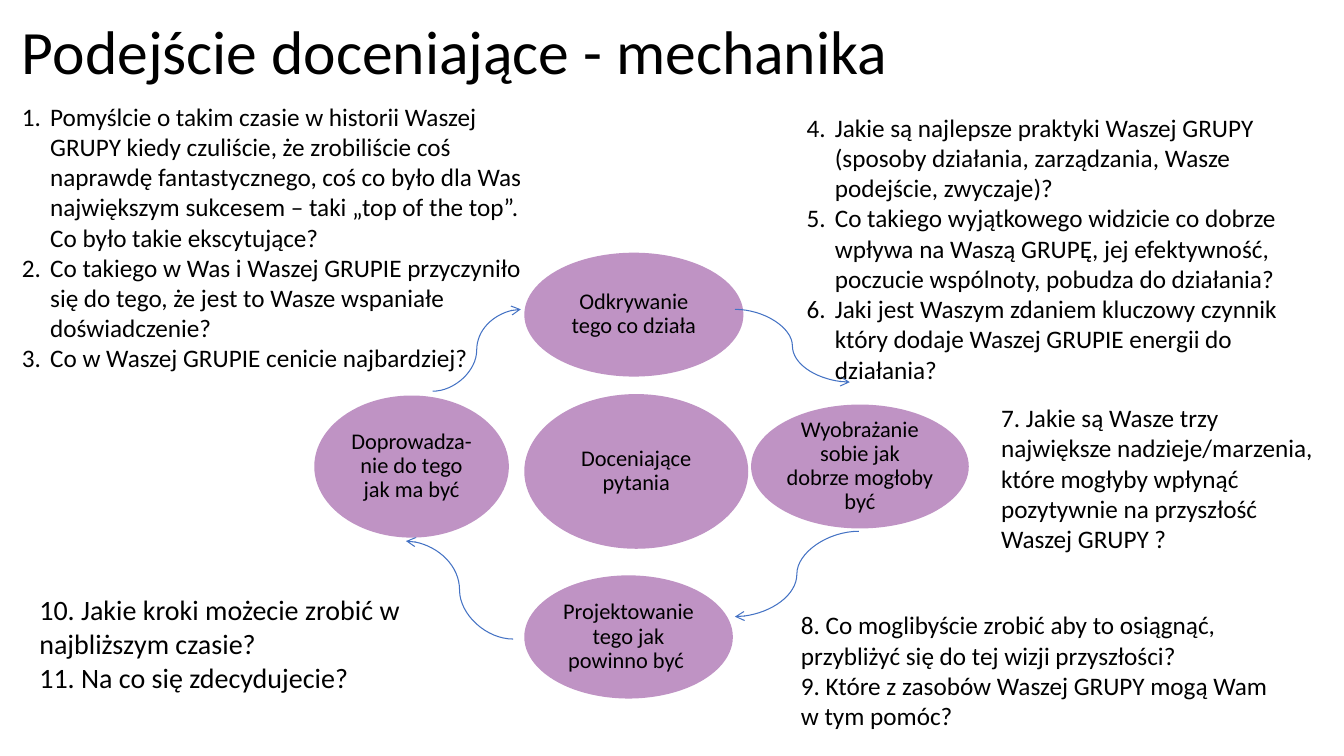
from lxml import etree
from pptx import Presentation
from pptx.dml.color import RGBColor
from pptx.enum.shapes import MSO_CONNECTOR, MSO_SHAPE
from pptx.enum.text import MSO_ANCHOR, MSO_AUTO_SIZE, PP_ALIGN
from pptx.oxml.ns import qn
from pptx.util import Pt

OVAL = MSO_SHAPE.OVAL
CURVE = MSO_CONNECTOR.CURVE
MIDDLE, TOP = MSO_ANCHOR.MIDDLE, MSO_ANCHOR.TOP
LEFT, CENTER = PP_ALIGN.LEFT, PP_ALIGN.CENTER
NO_FIT = MSO_AUTO_SIZE.NONE

FONT = "Calibri"
COLORS = {"text": "000000", "oval": "BF93C4", "arrow": "4472C4"}
NUMBER_INDENT = 20.25

# Text, then left, top, width and height
OVALS = [
    ("Doceniające pytania", (374.5, 281.5, 160, 110.5)),
    ("Odkrywanie tego co działa", (374.5, 180.5, 156.5, 88.5)),
    ("Wyobrażanie sobie jak dobrze mogłoby być", (536.5, 289, 155.5, 88.5)),
    ("Projektowanie tego jak powinno być ", (374.5, 411, 149, 88)),
    ("Doprowadza-nie do tego jak ma być", (224.5, 282.5, 139, 101.5)),
]

# Start x, start y, end x, end y
ARROWS = [
    (525, 221, 607, 273),
    (613.5, 379.5, 525, 440.5),
    (366.5, 456.5, 290, 386.5),
    (309, 279.5, 372, 221),
]

DISCOVERY = [
    "Pomyślcie o takim czasie w historii Waszej GRUPY kiedy czuliście, że zrobiliście coś "
    "naprawdę fantastycznego, coś co było dla Was największym sukcesem – taki "
    "„top of the top”. Co było takie ekscytujące?",
    "Co takiego w Was i Waszej GRUPIE przyczyniło się do tego, że jest to Wasze wspaniałe "
    "doświadczenie?",
    "Co w Waszej GRUPIE cenicie najbardziej?",
]
PRACTICES = [
    "Jakie są najlepsze praktyki Waszej GRUPY (sposoby działania, zarządzania, Wasze "
    "podejście, zwyczaje)?",
    "Co takiego wyjątkowego widzicie co dobrze wpływa na Waszą GRUPĘ, jej efektywność, "
    "poczucie wspólnoty, pobudza do działania?",
    "Jaki jest Waszym zdaniem kluczowy czynnik który dodaje Waszej GRUPIE energii do działania?",
]
DREAMS = [
    "7. Jakie są Wasze trzy największe nadzieje/marzenia, które mogłyby wpłynąć pozytywnie "
    "na przyszłość Waszej GRUPY ?",
]
DESIGN = [
    "8. Co moglibyście zrobić aby to osiągnąć, przybliżyć się do tej wizji przyszłości?",
    "9. Które z zasobów Waszej GRUPY mogą Wam w tym pomóc?",
]
STEPS = [
    "10. Jakie kroki możecie zrobić w najbliższym czasie?",
    "11. Na co się zdecydujecie?",
]


def color(name):
    return RGBColor.from_string(COLORS[name])


def write(frame, texts, size, anchor=TOP, align=LEFT, spacing=1.0, after=0):
    """Fill a text frame with one paragraph per text."""
    frame.word_wrap = True
    frame.auto_size = NO_FIT
    frame.vertical_anchor = anchor
    for index, text in enumerate(texts):
        para = frame.add_paragraph() if index else frame.paragraphs[0]
        para.alignment = align
        para.line_spacing = spacing
        para.space_before, para.space_after = Pt(0), Pt(after)
        span = para.add_run()
        span.text = text
        span.font.name = FONT
        span.font.size = Pt(size)
        span.font.color.rgb = color("text")


def number(frame, start):
    """Number the paragraphs automatically, counting from start."""
    for para in frame.paragraphs:
        properties = para._p.get_or_add_pPr()
        properties.set("marL", str(Pt(NUMBER_INDENT)))
        properties.set("indent", str(-Pt(NUMBER_INDENT)))
        bullet = etree.SubElement(properties, qn("a:buAutoNum"), type="arabicPeriod")
        bullet.set("startAt", str(start))


def add_title(page, text):
    title = page.shapes.title
    title.left, title.top, title.width, title.height = Pt(8.5), Pt(5), Pt(813.5), Pt(68.5)
    write(title.text_frame, [text], 44, MIDDLE, spacing=0.9)


def add_oval(page, text, place):
    oval = page.shapes.add_shape(OVAL, *map(Pt, place))
    oval.shadow.inherit = False
    oval.fill.solid()
    oval.fill.fore_color.rgb = color("oval")
    oval.line.fill.background()
    frame = oval.text_frame
    frame.margin_left = frame.margin_right = Pt(2.5)
    frame.margin_top = frame.margin_bottom = Pt(2.5)
    write(frame, [text], 16, MIDDLE, CENTER, spacing=0.9, after=7)


def add_arrow(page, ends):
    arrow = page.shapes.add_connector(CURVE, *map(Pt, ends))
    arrow.line.color.rgb = color("arrow")
    arrow.line.width = Pt(0.75)
    etree.SubElement(arrow.line._get_or_add_ln(), qn("a:tailEnd"), type="arrow")
    etree.SubElement(arrow._element.spPr, qn("a:effectLst"))


def add_questions(page, texts, place, size=18, start=None):
    box = page.shapes.add_textbox(*map(Pt, place))
    write(box.text_frame, texts, size)
    if start is not None:
        number(box.text_frame, start)


def main():
    deck = Presentation()
    deck.slide_width, deck.slide_height = Pt(960), Pt(540)
    page = deck.slides.add_slide(deck.slide_layouts.get_by_name("Title Only"))
    add_title(page, "Podejście doceniające - mechanika")
    for text, place in OVALS:
        add_oval(page, text, place)
    for ends in ARROWS:
        add_arrow(page, ends)
    add_questions(page, DISCOVERY, (8.5, 68.5, 383, 204), start=1)
    add_questions(page, DREAMS, (708, 284, 250.5, 116.5))
    add_questions(page, DESIGN, (565, 432, 354, 94.5))
    add_questions(page, STEPS, (21, 420, 312, 80), size=20)
    add_questions(page, PRACTICES, (569, 76.5, 383, 204), start=4)
    deck.save("out.pptx")


if __name__ == "__main__":
    main()
